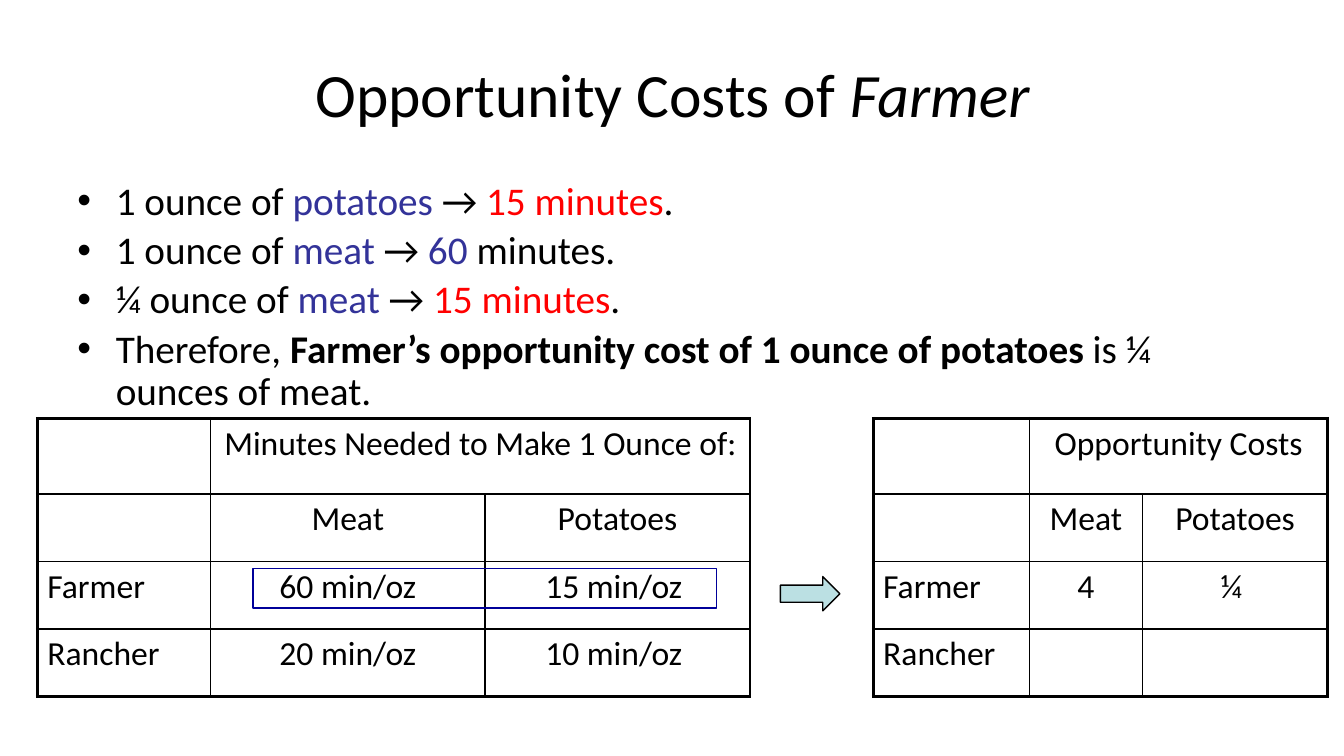
from lxml.etree import SubElement
from pptx import Presentation
from pptx.dml.color import RGBColor
from pptx.enum.shapes import MSO_SHAPE as SHAPE
from pptx.enum.text import MSO_ANCHOR as ANCHOR, PP_ALIGN as ALIGN
from pptx.oxml import parse_xml
from pptx.oxml.ns import nsdecls, qn
from pptx.util import Pt

PX = 9144  # 100 px to the inch
FONT = "Calibri"
BLACK = RGBColor(0x00, 0x00, 0x00)
INDIGO = RGBColor(0x33, 0x33, 0x99)
RED = RGBColor(0xFF, 0x00, 0x00)
NAVY = RGBColor(0x00, 0x00, 0x99)
PALE_TEAL = RGBColor(0xBB, 0xE0, 0xE3)
THIN, THICK = 1, 2.25

GOOD, TIME, STRONG = {"color": INDIGO}, {"color": RED}, {"bold": True}
STEPS = [
    [("1 ounce of ", {}), ("potatoes ", GOOD), ("→ ", {}), ("15 minutes", TIME), (".", {})],
    [("1 ounce of ", {}), ("meat ", GOOD), ("→ ", {}), ("60", GOOD), (" minutes.", {})],
    [("¼ ounce of ", {}), ("meat ", GOOD), ("→ ", {}), ("15 minutes", TIME), (".", {})],
    [("Therefore, ", {}), ("Farmer’s opportunity cost of 1 ounce of potatoes", STRONG),
     (" is ¼ ounces of meat.", {})],
]
MINUTES = [
    ["", "Minutes Needed to Make 1 Ounce of:", ""],
    ["", "Meat", "Potatoes"],
    ["Farmer", "60 min/oz", "15 min/oz "],
    ["Rancher", "20 min/oz", "10 min/oz "],
]
COSTS = [
    ["", "Opportunity Costs", ""],
    ["", "Meat", "Potatoes"],
    ["Farmer", "4", "¼ "],
    ["Rancher", "", ""],
]
ROW_HEIGHTS = [75, 67, 67, 67]


def scaled(*lengths):
    return [length * PX for length in lengths]


def add_run(paragraph, text, size, color=BLACK, **style):
    run = paragraph.add_run()
    run.text = text
    for name, value in {"name": FONT, "size": Pt(size), **style}.items():
        setattr(run.font, name, value)
    run.font.color.rgb = color


def place_title(slide, box):
    title = slide.shapes.title
    title.left, title.top, title.width, title.height = scaled(*box)
    title.text_frame.vertical_anchor = ANCHOR.MIDDLE
    heading = title.text_frame.paragraphs[0]
    heading.alignment = ALIGN.CENTER
    add_run(heading, "Opportunity Costs of ", 44)
    add_run(heading, "Farmer", 44, italic=True)


def add_steps(slide, box):
    frame = slide.shapes.add_textbox(*scaled(*box)).text_frame
    frame.word_wrap = True
    for index, step in enumerate(STEPS):
        paragraph = frame.add_paragraph() if index else frame.paragraphs[0]
        paragraph.line_spacing = 0.9
        paragraph.space_before = Pt(5)
        properties = paragraph._p.get_or_add_pPr()
        properties.set("marL", str(38 * PX))
        properties.set("indent", str(-38 * PX))
        SubElement(properties, qn("a:buFont")).set("typeface", "Arial")
        SubElement(properties, qn("a:buChar")).set("char", "•")
        for text, style in step:
            add_run(paragraph, text, 28, **style)


def set_borders(cell, widths):
    """Draw black borders of the given point widths: left, right, top, bottom."""
    properties = cell._tc.get_or_add_tcPr()
    for index, (side, width) in enumerate(zip("LRTB", widths)):
        properties.insert(index, parse_xml(
            f'<a:ln{side} {nsdecls("a")} w="{Pt(width)}"><a:solidFill>'
            f'<a:srgbClr val="{BLACK}"/></a:solidFill></a:ln{side}>'))


def add_grid(slide, left, top, column_widths, rows):
    """Add a table with thick outer edges and a heading across its last two columns."""
    box = scaled(left, top, sum(column_widths), sum(ROW_HEIGHTS))
    grid = slide.shapes.add_table(len(rows), len(column_widths), *box).table
    grid.first_row = grid.horz_banding = False
    for column, width in zip(grid.columns, column_widths):
        column.width = width * PX
    for row, height in zip(grid.rows, ROW_HEIGHTS):
        row.height = height * PX
    grid.cell(0, 1).merge(grid.cell(0, 2))
    last_row, last_column = len(rows) - 1, len(column_widths) - 1
    for r, row in enumerate(rows):
        for c, text in enumerate(row):
            cell = grid.cell(r, c)
            cell.fill.background()
            right_edge = c == last_column or (r == 0 and c == 1)
            outer = (c == 0, right_edge, r == 0, r == last_row)
            set_borders(cell, [THICK if edge else THIN for edge in outer])
            if text:
                paragraph = cell.text_frame.paragraphs[0]
                paragraph.alignment = ALIGN.CENTER if c else ALIGN.LEFT
                add_run(paragraph, text, 24)


def add_outlined(slide, kind, box, line_color, fill_color=None):
    shape = slide.shapes.add_shape(kind, *scaled(*box))
    shape.shadow.inherit = False
    if fill_color is None:
        shape.fill.background()
    else:
        shape.fill.solid()
        shape.fill.fore_color.rgb = fill_color
    shape.line.color.rgb = line_color
    shape.line.width = Pt(THIN)


def build_slide(deck):
    slide = deck.slides.add_slide(deck.slide_layouts[5])
    place_title(slide, (67, 30, 1200, 125))
    add_steps(slide, (67, 175, 1200, 495))
    add_grid(slide, 866, 415, [155, 112, 184], COSTS)
    add_grid(slide, 37, 415, [172, 272, 263], MINUTES)
    add_outlined(slide, SHAPE.RIGHT_ARROW, (774, 572, 59, 34), BLACK, PALE_TEAL)
    add_outlined(slide, SHAPE.RECTANGLE, (251, 564, 460, 39), NAVY)


def main():
    deck = Presentation()
    deck.slide_width, deck.slide_height = scaled(1333, 750)
    build_slide(deck)
    deck.save("out.pptx")


if __name__ == "__main__":
    main()
